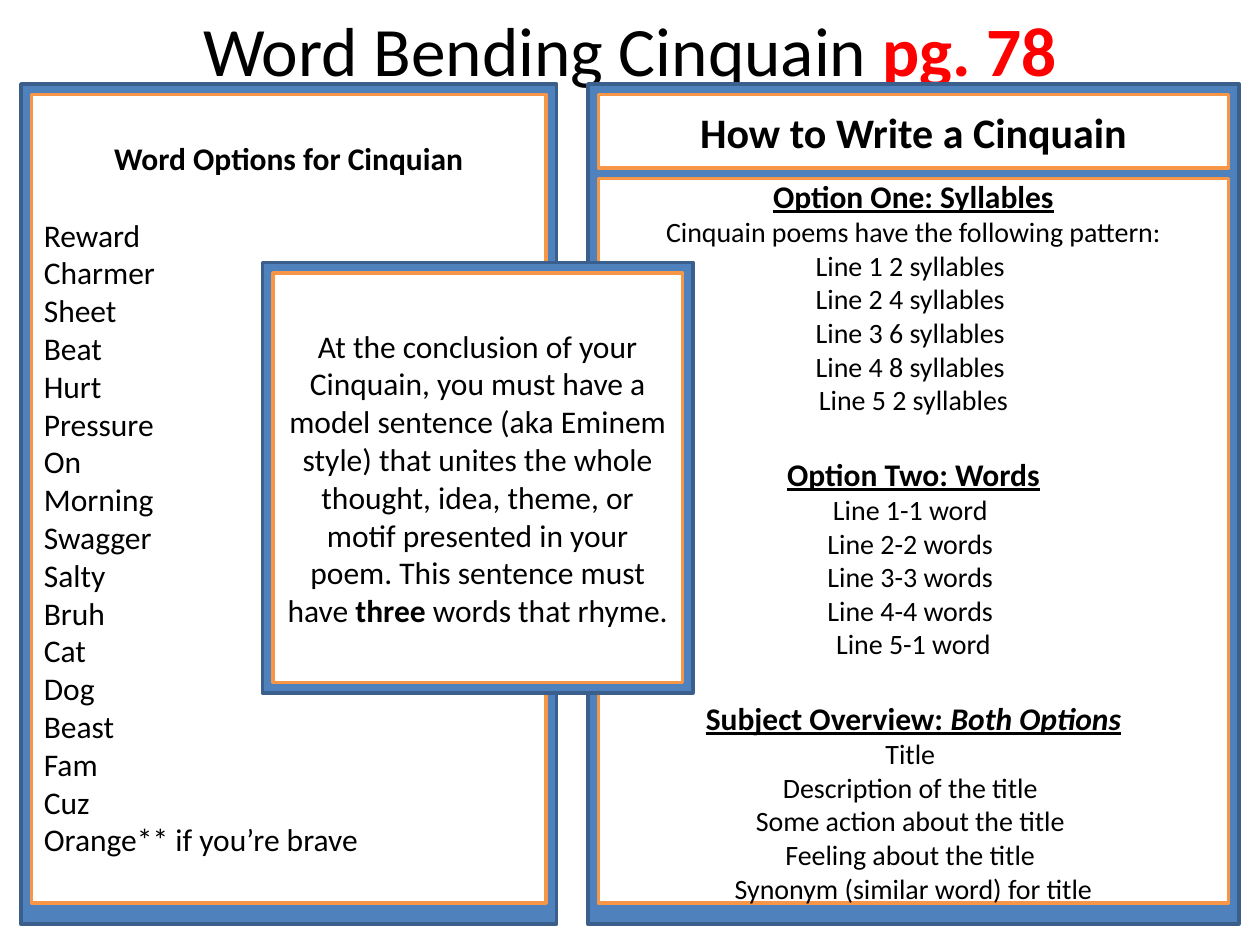
import pptx
import pptx.util
import pptx.dml.color
import pptx.enum.shapes
import pptx.enum.text

RGB = pptx.dml.color.RGBColor
BLACK = RGB(0, 0, 0)
RED = RGB(255, 0, 0)
WHITE = RGB(255, 255, 255)
BLUE = RGB(0x4F, 0x81, 0xBD)
NAVY = RGB(0x3A, 0x5F, 0x8C)
ORANGE = RGB(0xF7, 0x96, 0x46)
FONT = "Calibri"
PX = 9525  # EMU in one px, 96 px to the inch
GAP = 22   # points, one line of 18 pt text

CENTER = pptx.enum.text.PP_ALIGN.CENTER
LEFT = pptx.enum.text.PP_ALIGN.LEFT
MIDDLE = pptx.enum.text.MSO_ANCHOR.MIDDLE

# Content: a run is (text, styles), with b, i, u for bold, italic, underline
TITLE = [("Word Bending Cinquain ", ""), ("pg. 78", "b")]
HOW = [("How to Write a Cinquain", "b")]
OPTIONS = [
    ([("Option One: Syllables", "bu")],
     ["Cinquain poems have the following pattern:", "Line 1 2 syllables ",
      "Line 2 4 syllables ", "Line 3 6 syllables ", "Line 4 8 syllables ",
      "Line 5 2 syllables"]),
    ([("Option Two: Words", "bu")],
     ["Line 1-1 word ", "Line 2-2 words ", "Line 3-3 words ",
      "Line 4-4 words ", "Line 5-1 word"]),
    ([("Subject Overview: ", "bu"), ("Both Options", "biu")],
     ["Title ", "Description of the title ", "Some action about the title ",
      "Feeling about the title ", "Synonym (similar word) for title"]),
]
HEAD = [("Word Options for Cinquian", "b")]
WORDS = ["Reward", "Charmer", "Sheet", "Beat", "Hurt", "Pressure", "On",
         "Morning", "Swagger", "Salty", "Bruh", "Cat", "Dog", "Beast", "Fam",
         "Cuz", "Orange** if you’re brave"]
NOTE = [("At the conclusion of your Cinquain, you must have a model sentence "
         "(aka Eminem style) that unites the whole thought, idea, theme, or "
         "motif presented in your poem. This sentence must have ", ""),
        ("three", "b"), (" words that rhyme. ", "")]

# Layout in px: left, top, width, height
TITLE_BOX = (48, 16, 864, 43)
RIGHT_BOX = (448, 64, 496, 640)
LEFT_BOX = (16, 64, 408, 640)
NOTE_BOX = (200, 200, 328, 328)
EDGE, FOOT, BAR = 8, 16, 56


def place(box):
    return [pptx.util.Emu(n * PX) for n in box]


def inset(box, foot=EDGE):
    x, y, w, h = box
    return x + EDGE, y + EDGE, w - 2 * EDGE, h - EDGE - foot


def write(para, runs, size, align=CENTER, before=0):
    para.alignment = align
    para.space_before = pptx.util.Pt(before)
    for text, style in runs:
        run = para.add_run()
        run.text = text
        font = run.font
        font.name = FONT
        font.size = pptx.util.Pt(size)
        font.color.rgb = BLACK
        font.bold = "b" in style
        font.italic = "i" in style
        font.underline = "u" in style


def fill(shape, paras):
    frame = shape.text_frame
    frame.word_wrap = True
    frame.auto_size = pptx.enum.text.MSO_AUTO_SIZE.NONE
    frame.vertical_anchor = MIDDLE
    for n, args in enumerate(paras):
        write(frame.add_paragraph() if n else frame.paragraphs[0], *args)


def panel(slide, box, color, edge, paras=()):
    shape = slide.shapes.add_shape(
        pptx.enum.shapes.MSO_SHAPE.RECTANGLE, *place(box))
    shape.shadow.inherit = False
    shape.fill.solid()
    shape.fill.fore_color.rgb = color
    shape.line.color.rgb = edge
    shape.line.width = pptx.util.Pt(2)
    if paras:
        fill(shape, paras)


def main():
    deck = pptx.Presentation()
    deck.slide_width, deck.slide_height = place((960, 720))
    slide = deck.slides.add_slide(deck.slide_layouts[5])

    # Title
    title = slide.shapes.title
    title.left, title.top, title.width, title.height = place(TITLE_BOX)
    fill(title, [(TITLE, 39.6)])
    title.text_frame.paragraphs[0].runs[-1].font.color.rgb = RED

    # Right panel: heading bar above the options
    panel(slide, RIGHT_BOX, BLUE, NAVY)
    x, y, w, h = inset(RIGHT_BOX, FOOT)
    panel(slide, (x, y, w, BAR), WHITE, ORANGE, [(HOW, 24)])
    paras = []
    for head, lines in OPTIONS:
        paras.append((head, 18, CENTER, GAP if paras else 0))
        paras += [([(line, "")], 16) for line in lines]
    step = BAR + EDGE
    panel(slide, (x, y + step, w, h - step), WHITE, ORANGE, paras)

    # Left panel: word list
    panel(slide, LEFT_BOX, BLUE, NAVY)
    paras = [(HEAD, 18)]
    for n, word in enumerate(WORDS):
        paras.append(([(word, "")], 18, LEFT, 0 if n else GAP))
    panel(slide, inset(LEFT_BOX, FOOT), WHITE, ORANGE, paras)

    # Note on top of both panels
    panel(slide, NOTE_BOX, BLUE, NAVY)
    panel(slide, inset(NOTE_BOX), WHITE, ORANGE, [(NOTE, 18)])

    deck.save("out.pptx")


if __name__ == "__main__":
    main()
